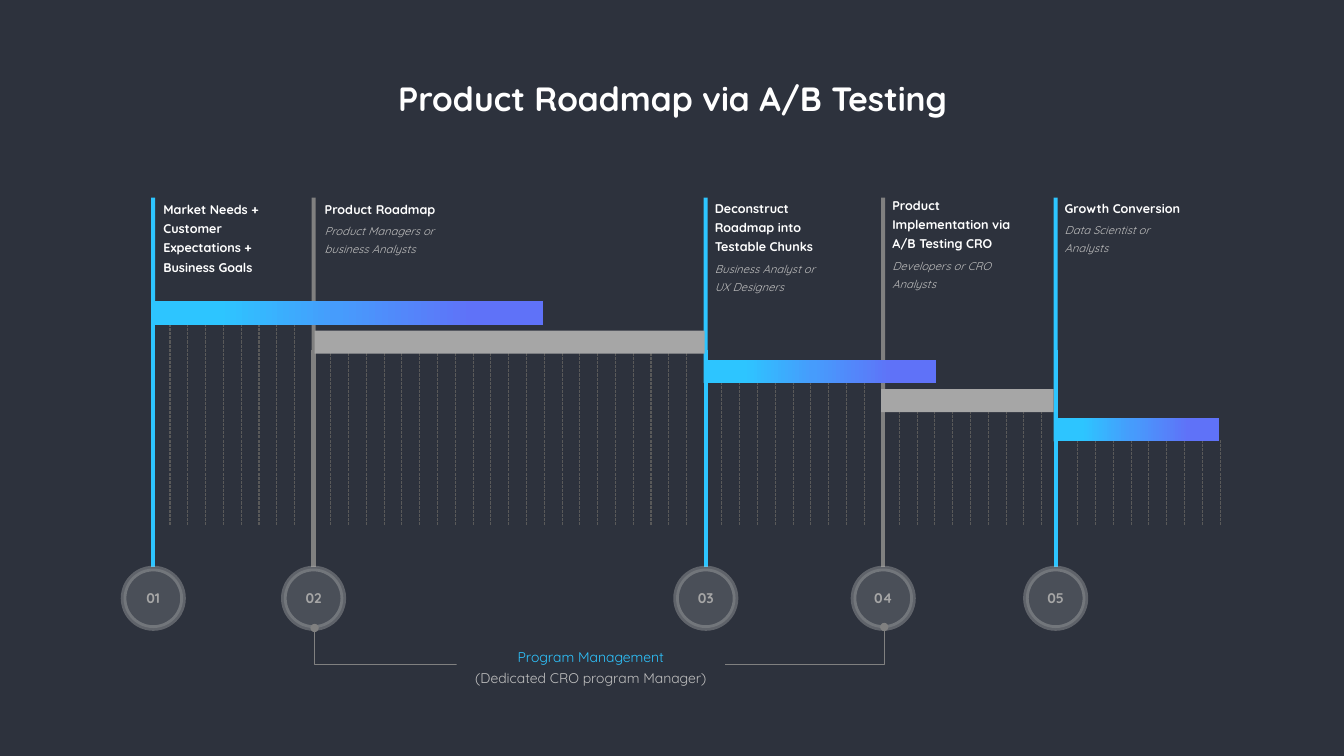
from copy import deepcopy

from lxml import etree
from pptx import Presentation
from pptx.dml import color
from pptx.enum import dml, shapes, text
from pptx.oxml import ns
from pptx.util import Inches, Pt

COLORS = {
    "background": "2D323D", "white": "FFFFFF", "cyan": "2DC5FF", "gray": "808080",
    "bar": "A6A6A6", "tick": "595959", "pale": "BFBFBF", "disc": "4A4F58",
}
GRADIENT = [(0.17, "2DC5FF"), (0.47, "469CFC"), (0.82, "5F72F8")]
FONT = "Quicksand"
TITLE = "Product Roadmap via A/B Testing"
PROGRAM = [("Program Management", "cyan"), ("(Dedicated CRO program Manager)", "pale")]

STAGES = [
    dict(name="Market Needs + Customer Expectations + Business Goals", name_box=(1.62, 1.96, 1.22, 0.76),
         post=1.52, post_top=3.12, bar=(1.51, 3.88), ticks=(1.51, 3.18, 9)),
    dict(name="Product Roadmap", name_box=(3.22, 1.96, 1.45, 0.17),
         owner="Product Managers or business Analysts", owner_box=(3.22, 2.18, 1.22, 0.34),
         post=3.11, post_top=3.47, bar=(3.12, 3.87), ticks=(3.28, 3.37, 21)),
    dict(name="Deconstruct Roadmap into Testable Chunks", name_box=(7.09, 1.95, 1.22, 0.57),
         owner="Business Analyst or UX Designers", owner_box=(7.09, 2.56, 1.13, 0.34),
         post=7, post_top=3.47, bar=(6.98, 2.3), ticks=(7.16, 3.79, 9)),
    dict(name="Product Implementation via A/B Testing CRO", name_box=(8.85, 1.92, 1.34, 0.57),
         owner="Developers or CRO Analysts", owner_box=(8.85, 2.53, 1, 0.34),
         post=8.76, post_top=3.47, bar=(8.74, 1.71), ticks=(8.92, 4.08, 9)),
    dict(name="Growth Conversion", name_box=(10.56, 1.95, 1.53, 0.17),
         owner="Data Scientist or Analysts", owner_box=(10.56, 2.17, 0.85, 0.34),
         post=10.47, post_top=3.47, bar=(10.45, 1.64), ticks=(10.69, 4.37, 9)),
]
STEM_TOP, STEM_WIDTH = 1.96, 0.04
BAR_TOP, BAR_STEP, BAR_HEIGHT = 2.99, 0.29, 0.23
TICK_BOTTOM, TICK_STEP = 5.21, 3.53 / 20
POST_BOTTOM, DISC_TOP, DISC_SIZE = 5.63, 5.64, 0.59

NAME = dict(size=9, bold=True, color="white", line=13.8, before=10)
OWNER = dict(size=8, italic=True, color="pale", line=12.8)
HEADING = dict(size=24, bold=True, color="white", align="CENTER", anchor="MIDDLE")
NUMBER = dict(size=10, bold=True, color="bar", align="CENTER", anchor="MIDDLE", grow=False)
CAPTION = dict(size=10, align="CENTER", anchor="MIDDLE", line=15.4)

prs = Presentation()
prs.slide_width, prs.slide_height = Inches(13.33), Inches(7.5)
slide = prs.slides.add_slide(prs.slide_layouts[6])


def rgb(name):
    return color.RGBColor.from_string(COLORS[name])


def write(frame, lines, look):
    frame.word_wrap = True
    grow = look.get("grow", True)
    frame.auto_size = text.MSO_AUTO_SIZE.SHAPE_TO_FIT_TEXT if grow else text.MSO_AUTO_SIZE.NONE
    frame.vertical_anchor = text.MSO_ANCHOR[look.get("anchor", "TOP")]
    for side in ("left", "top", "right", "bottom"):
        setattr(frame, "margin_" + side, 0)
    for i, (words, tone) in enumerate(lines):
        para = frame.add_paragraph() if i else frame.paragraphs[0]
        para.alignment = text.PP_ALIGN[look.get("align", "LEFT")]
        if "line" in look:
            para.line_spacing = Pt(look["line"])
        if "before" in look:
            para.space_before = Pt(look["before"])
        run = para.add_run()
        run.text = words
        values = dict(name=FONT, size=Pt(look["size"]), bold=look.get("bold", False),
                      italic=look.get("italic", False))
        for key, value in values.items():
            setattr(run.font, key, value)
        run.font.color.rgb = rgb(tone)


def label(box, words, look):
    holder = slide.shapes.add_textbox(*map(Inches, box))
    write(holder.text_frame, [(words, look["color"])], look)


def block(box, fill, kind="RECTANGLE"):
    shape = slide.shapes.add_shape(shapes.MSO_SHAPE[kind], *map(Inches, box))
    shape.shadow.inherit = False
    shape.line.fill.background()
    if fill == "gradient":
        shape.fill.gradient()
        shape.fill.gradient_angle = 0
        stops = shape._element.spPr.find(ns.qn("a:gradFill")).find(ns.qn("a:gsLst"))
        stops.append(deepcopy(stops[0]))
        for stop, (position, tone) in zip(shape.fill.gradient_stops, GRADIENT):
            stop.color.rgb = color.RGBColor.from_string(tone)
            stop.position = position
    else:
        shape.fill.solid()
        shape.fill.fore_color.rgb = rgb(fill)
    return shape


def rule(start, end, tone, width, dash=None, kind="STRAIGHT"):
    line = slide.shapes.add_connector(shapes.MSO_CONNECTOR[kind], *map(Inches, start + end))
    line.line.color.rgb = rgb(tone)
    line.line.width = Pt(width)
    if dash:
        line.line.dash_style = dash
    etree.SubElement(line._element.spPr, ns.qn("a:effectLst"))
    return line


slide.background.fill.solid()
slide.background.fill.fore_color.rgb = rgb("background")
label((3.18, 0.77, 6.98, 0.4), TITLE, HEADING)

for stage in STAGES:
    first, top, count = stage["ticks"]
    for i in range(count):
        x = first + i * TICK_STEP
        rule((x, TICK_BOTTOM), (x, top), "tick", 0.75, dml.MSO_LINE.SQUARE_DOT)

for i, stage in enumerate(STAGES):
    x, tone = stage["post"], ("cyan", "gray")[i % 2]
    rule((x, POST_BOTTOM), (x, stage["post_top"]), tone, 3)
    stem_height = BAR_TOP + i * BAR_STEP + BAR_HEIGHT - STEM_TOP
    block((x - STEM_WIDTH / 2, STEM_TOP, STEM_WIDTH, stem_height), tone)

for i, stage in enumerate(STAGES):
    left, width = stage["bar"]
    block((left, BAR_TOP + i * BAR_STEP, width, BAR_HEIGHT), ("gradient", "bar")[i % 2])
    label(stage["name_box"], stage["name"], NAME)
    if "owner" in stage:
        label(stage["owner_box"], stage["owner"], OWNER)
    disc = block((stage["post"] - DISC_SIZE / 2, DISC_TOP, DISC_SIZE, DISC_SIZE), "disc", "OVAL")
    disc.line.color.rgb = rgb("pale")
    disc.line.width = Pt(4)
    ring = disc.line._ln.find(ns.qn("a:solidFill"))[0]
    etree.SubElement(ring, ns.qn("a:alpha"), val="34000")
    write(disc.text_frame, [(f"{i + 1:02}", NUMBER["color"])], NUMBER)

bracket = rule((5.94, 3.4), (5.95, 9.05), "gray", 0.75, kind="ELBOW")
bracket._element.spPr.find(ns.qn("a:xfrm")).set("rot", "5400000")
geometry = bracket._element.spPr.find(ns.qn("a:prstGeom"))
etree.SubElement(geometry.find(ns.qn("a:avLst")), ns.qn("a:gd"), name="adj1", fmla="val 3800000")
for end in ("headEnd", "tailEnd"):
    etree.SubElement(bracket.line._ln, ns.qn("a:" + end), type="oval")

program = block((4.53, 6.4, 2.66, 0.4), "background")
write(program.text_frame, PROGRAM, CAPTION)

prs.save("out.pptx")
